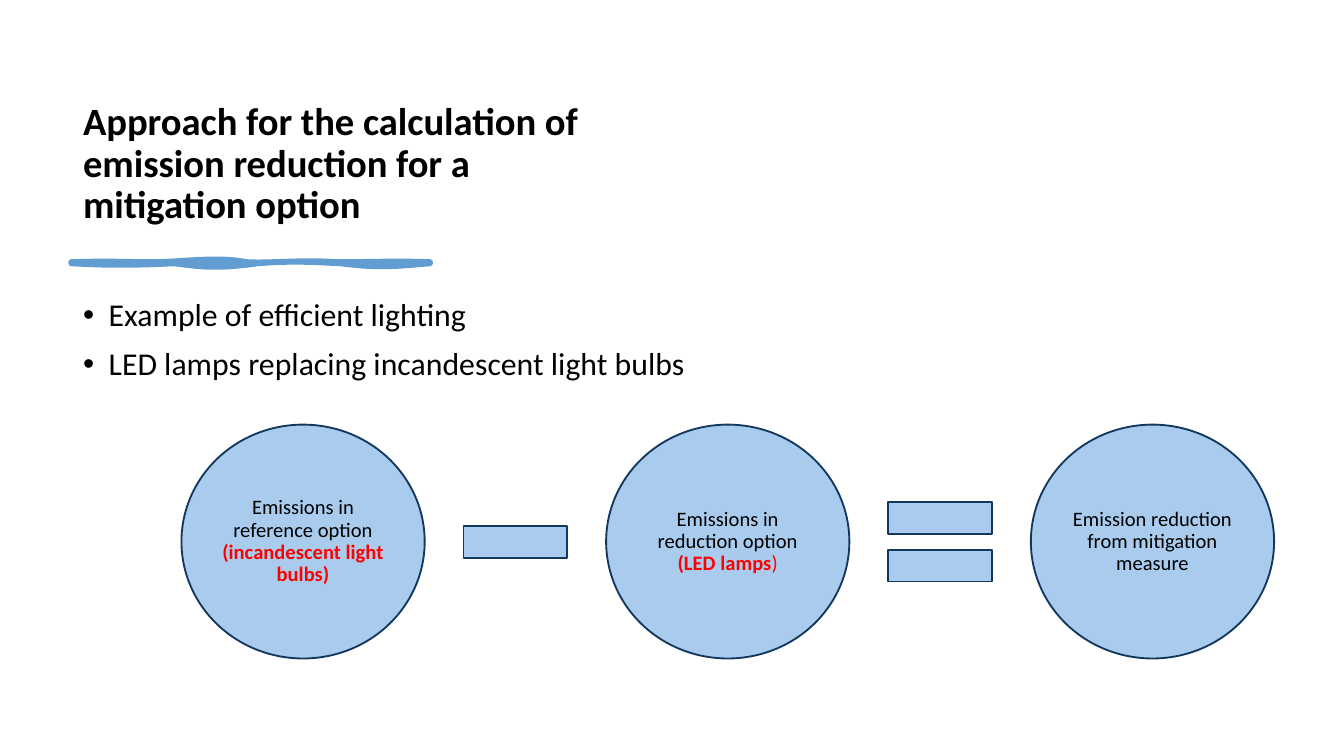
from lxml import etree
from pptx import Presentation
from pptx.dml.color import RGBColor
from pptx.enum.shapes import MSO_SHAPE
from pptx.enum.text import MSO_ANCHOR, PP_ALIGN
from pptx.oxml.ns import qn
from pptx.util import Inches, Pt

OVAL, MINUS, EQUAL = MSO_SHAPE.OVAL, MSO_SHAPE.MATH_MINUS, MSO_SHAPE.MATH_EQUAL
TOP, MIDDLE, BOTTOM = MSO_ANCHOR.TOP, MSO_ANCHOR.MIDDLE, MSO_ANCHOR.BOTTOM
LEFT, CENTER = PP_ALIGN.LEFT, PP_ALIGN.CENTER
COLORS = {"text": "000000", "accent": "FF0000", "wave": "629DD1",
          "fill": "A9CCEE", "edge": "12385D"}


def paint(shape, fill, edge, width):
    """Give a shape its fill and outline, without a shadow."""
    shape.shadow.inherit = False
    shape.fill.solid()
    shape.fill.fore_color.rgb = RGBColor.from_string(COLORS[fill])
    shape.line.color.rgb = RGBColor.from_string(COLORS[edge])
    shape.line.width = Pt(width)


def write(shape, paras, size, anchor=TOP, align=LEFT, bullet=False, gap=0, inset=(0.1, 0.05)):
    """Fill a shape with paragraphs, each a list of (text, color, bold) runs."""
    frame = shape.text_frame
    frame.word_wrap = True
    frame.vertical_anchor = anchor
    frame.margin_left = frame.margin_right = Inches(inset[0])
    frame.margin_top = frame.margin_bottom = Inches(inset[1])
    for i, runs in enumerate(paras):
        para = frame.add_paragraph() if i else frame.paragraphs[0]
        para.alignment = align
        para.line_spacing = 0.9
        if i:
            para.space_before = Pt(gap)
        if bullet:
            props = para._p.get_or_add_pPr()
            props.set("marL", str(Inches(0.19)))
            props.set("indent", str(-Inches(0.19)))
            etree.SubElement(props, qn("a:buFont")).set("typeface", "Arial")
            etree.SubElement(props, qn("a:buChar")).set("char", "•")
        for text, tint, bold in runs:
            run = para.add_run()
            run.text = text
            run.font.name = "Calibri"
            run.font.size = Pt(size)
            run.font.bold = bold
            run.font.color.rgb = RGBColor.from_string(COLORS[tint])


prs = Presentation()
prs.slide_width = Inches(10)
prs.slide_height = prs.slide_width * 9 // 16
slide = prs.slides.add_slide(prs.slide_layouts[6])
shapes = slide.shapes

# Title
title = shapes.add_textbox(Inches(0.52), Inches(0.52), Inches(3.95), Inches(1.22))
write(title, [[("Approach for the calculation of emission reduction for a mitigation option",
                "text", True)]], size=20.7, anchor=BOTTOM)

# Hand-drawn rule: cubic curves, each sampled in short steps
start = (0.53, 1.95)
curves = [
    ((0.83, 1.94), (0.92, 1.95), (1.17, 1.95)),
    ((1.44, 1.94), (1.62, 1.91), (1.84, 1.95)),
    ((2.01, 1.96), (2.25, 1.93), (2.5, 1.95)),
    ((2.73, 1.95), (2.98, 1.94), (3.2, 1.95)),
    ((3.2, 1.95), (3.2, 1.96), (3.2, 1.96)),
    ((2.89, 1.99), (2.77, 1.99), (2.53, 1.96)),
    ((2.29, 1.95), (2.19, 1.94), (1.92, 1.96)),
    ((1.64, 2), (1.5, 1.99), (1.3, 1.96)),
    ((1.1, 1.97), (0.86, 1.98), (0.53, 1.96)),
]
steps = 12
points = []
last = start
for one, two, end in curves:
    for n in range(1, steps + 1):
        t = n / steps
        s = 1 - t
        points.append([Inches(s**3 * a + 3 * s * s * t * b + 3 * s * t * t * c + t**3 * d)
                       for a, b, c, d in zip(last, one, two, end)])
    last = end
outline = shapes.build_freeform(Inches(start[0]), Inches(start[1]))
outline.add_line_segments(points, close=True)
paint(outline.convert_to_shape(), "wave", "wave", 3)

# Bullets
body = shapes.add_textbox(Inches(0.52), Inches(2.18), Inches(6.79), Inches(2.91))
write(body, [[("Example of efficient lighting", "text", False)],
             [("LED lamps replacing incandescent light bulbs", "text", False)]],
      size=17, bullet=True, gap=7.5)

# Equation: reference - reduction = saving
terms = [
    (OVAL, [("Emissions in reference option ", "text", False),
            ("(incandescent light bulbs)", "accent", True)]),
    (MINUS, None),
    (OVAL, [("Emissions in reduction option ", "text", False),
            ("(LED lamps", "accent", True), (")", "accent", False)]),
    (EQUAL, None),
    (OVAL, [("Emission reduction from mitigation measure", "text", False)]),
]
left, mid, space = 1.35, 4.03, 0.15
for kind, runs in terms:
    wide, high = (1.81, 1.74) if runs else (1.05, 1.01)
    term = shapes.add_shape(kind, Inches(left), Inches(mid - high / 2),
                            Inches(wide), Inches(high))
    paint(term, "fill", "edge", 1)
    if runs:
        write(term, [runs], size=11, anchor=MIDDLE, align=CENTER, inset=(0, 0))
    left += wide + space

prs.save("out.pptx")
